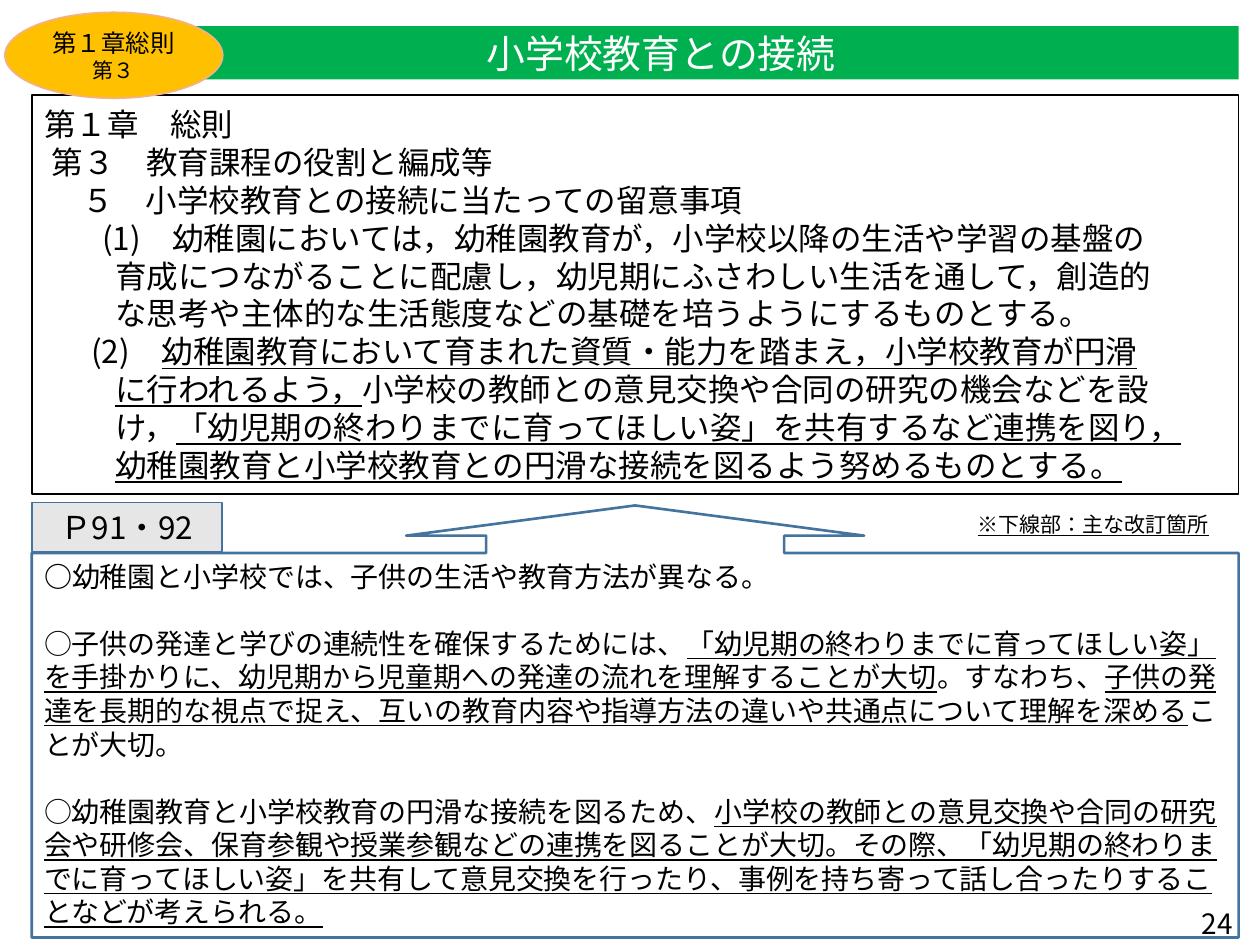
from dataclasses import dataclass
from typing import Optional

import pptx
import pptx.dml.color
import pptx.enum.lang
import pptx.enum.shapes
import pptx.enum.text
import pptx.oxml
import pptx.oxml.ns
import pptx.util

Cm = pptx.util.Cm
Pt = pptx.util.Pt
RGBColor = pptx.dml.color.RGBColor
Kind = pptx.enum.shapes.MSO_SHAPE
Align = pptx.enum.text.PP_ALIGN
Anchor = pptx.enum.text.MSO_ANCHOR

GREEN = RGBColor(0x00, 0xB0, 0x50)
AMBER = RGBColor(0xFF, 0xC0, 0x00)
PEACH = RGBColor(0xF4, 0xB1, 0x83)
GREY = RGBColor(0xE7, 0xE6, 0xE6)
BLUE = RGBColor(0x43, 0x73, 0x9E)
BLACK = RGBColor(0x00, 0x00, 0x00)
WHITE = RGBColor(0xFF, 0xFF, 0xFF)

FONT = "Noto Sans CJK JP"
PITCH = 1.2  # line pitch as a multiple of the font size


@dataclass
class Para:
    """One paragraph: "_" switches underline, "\\v" breaks the line."""
    text: str
    size: float
    color: RGBColor = BLACK
    align: Align = Align.LEFT
    left: float = 0
    first: float = 0
    gap: float = 0


@dataclass
class Box:
    """A shape, or a plain text box when kind is None; lengths in cm."""
    kind: Optional[Kind]
    area: tuple[float, float, float, float]
    paras: list[Para]
    fill: Optional[RGBColor] = None
    line: Optional[RGBColor] = None
    width: float = 1
    anchor: Anchor = Anchor.MIDDLE
    adjust: tuple[float, ...] = ()


def style(run, para: Para, under: bool) -> None:
    font = run.font
    font.size = Pt(para.size)
    font.name = FONT
    font.color.rgb = para.color
    font.underline = under
    font.language_id = pptx.enum.lang.MSO_LANGUAGE_ID.JAPANESE
    east = pptx.oxml.parse_xml(
        f'<a:ea {pptx.oxml.ns.nsdecls("a")} typeface="{FONT}"/>')
    font._element.append(east)


def write(item, para: Para) -> None:
    item.alignment = para.align
    item.line_spacing = Pt(para.size * PITCH)
    item.space_before = Pt(para.gap)
    props = item._p.get_or_add_pPr()
    props.set("marL", str(Cm(para.left)))
    props.set("indent", str(Cm(para.first - para.left)))
    for part, piece in enumerate(para.text.split("_")):
        for row, words in enumerate(piece.split("\v")):
            if row:
                item.add_line_break()
            if words:
                run = item.add_run()
                run.text = words
                style(run, para, part % 2 == 1)


def draw(slide, box: Box):
    area = [Cm(side) for side in box.area]
    if box.kind is None:
        shape = slide.shapes.add_textbox(*area)
    else:
        shape = slide.shapes.add_shape(box.kind, *area)
        shape.shadow.inherit = False
        for spot, value in enumerate(box.adjust):
            shape.adjustments[spot] = value
    if box.fill is None:
        shape.fill.background()
    else:
        shape.fill.solid()
        shape.fill.fore_color.rgb = box.fill
    if box.line is None:
        shape.line.fill.background()
    else:
        shape.line.color.rgb = box.line
        shape.line.width = Pt(box.width)
    frame = shape.text_frame
    frame.word_wrap = True
    frame.vertical_anchor = box.anchor
    for spot, para in enumerate(box.paras):
        item = frame.add_paragraph() if spot else frame.paragraphs[0]
        write(item, para)
    return shape


# Text of the course guidelines
RULES = [
    Para("第１章　総則", 18),
    Para("第３　教育課程の役割と編成等", 18, left=0.15, first=0.15),
    Para("５　小学校教育との接続に当たっての留意事項", 18, left=0.78, first=0.78),
    Para("(1)　幼稚園においては，幼稚園教育が，小学校以降の生活や学習の基盤の\v"
         "育成につながることに配慮し，幼児期にふさわしい生活を通して，創造的\v"
         "な思考や主体的な生活態度などの基礎を培うようにするものとする。",
         18, left=1.43, first=1.17),
    Para("(2)　_幼稚園教育において育まれた資質・能力を踏まえ，小学校教育が円滑\v"
         "に行われるよう，_小学校の教師との意見交換や合同の研究の機会などを設\v"
         "け，_「幼児期の終わりまでに育ってほしい姿」を共有するなど連携を図り，\v"
         "幼稚園教育と小学校教育との円滑な接続を図るよう努めるものとする。",
         18, left=1.43, first=0.95),
]

# Explanation of the guidelines
POINTS = [
    Para("○__幼稚園と小学校では、子供の生活や教育方法が異なる。", 16),
    Para("○子供の発達と学びの連続性を確保するためには、"
         "_「幼児期の終わりまでに育ってほしい姿」を手掛かりに、"
         "幼児期から児童期への発達の流れを理解することが大切_。すなわち、"
         "_子供の発達を長期的な視点で捉え、互いの教育内容や指導方法の違いや"
         "共通点について理解を深める_ことが大切。", 16, gap=16 * PITCH),
    Para("○幼稚園教育と小学校教育の円滑な接続を図るため、"
         "_小学校の教師との意見交換や合同の研究会や研修会、保育参観や授業参観などの"
         "連携を図ることが大切。その際、「幼児期の終わりまでに育ってほしい姿」を"
         "共有して意見交換を行ったり、事例を持ち寄って話し合ったりすることなどが"
         "考えられる。", 16, gap=16 * PITCH),
]

# Boxes from back to front
TITLE = Box(Kind.RECTANGLE, (1.68, 0.53, 23.29, 1.07),
            [Para("小学校教育との接続", 22.2, WHITE, Align.CENTER)], GREEN)
GUIDE = Box(Kind.RECTANGLE, (0.64, 1.91, 24.33, 8.05), RULES, line=BLACK)
NOTE = Box(None, (19.46, 10.19, 5.54, 0.76),
           [Para("_※下線部：主な改訂箇所", 12)], anchor=Anchor.TOP)
NUMBER = Box(None, (19.38, 18.11, 5.72, 1.02),
             [Para("24", 16, align=Align.RIGHT)])
BADGE = Box(Kind.OVAL, (0.1, 0.25, 4.39, 1.73),
            [Para("第１章総則", 14, align=Align.CENTER),
             Para("第３", 12, align=Align.CENTER)], AMBER, PEACH)
PAGES = Box(Kind.RECTANGLE, (0.64, 10.13, 3.84, 0.99),
            [Para("Ｐ91・92", 18, align=Align.CENTER)], GREY, BLUE)
CALLOUT = Box(Kind.UP_ARROW_CALLOUT, (0.64, 10.19, 24.33, 8.71), POINTS,
              line=BLUE, width=1.5, anchor=Anchor.TOP,
              adjust=(0.69, 0.53, 0.07, 0.89))


def main() -> None:
    deck = pptx.Presentation()
    deck.slide_width, deck.slide_height = Cm(25.4), Cm(19.05)
    slide = deck.slides.add_slide(deck.slide_layouts[6])
    for box in (TITLE, GUIDE, NOTE, NUMBER, BADGE, PAGES):
        draw(slide, box)
    callout = draw(slide, CALLOUT)
    callout.text_frame.paragraphs[0].runs[0].font.bold = True
    deck.save("out.pptx")


if __name__ == "__main__":
    main()
